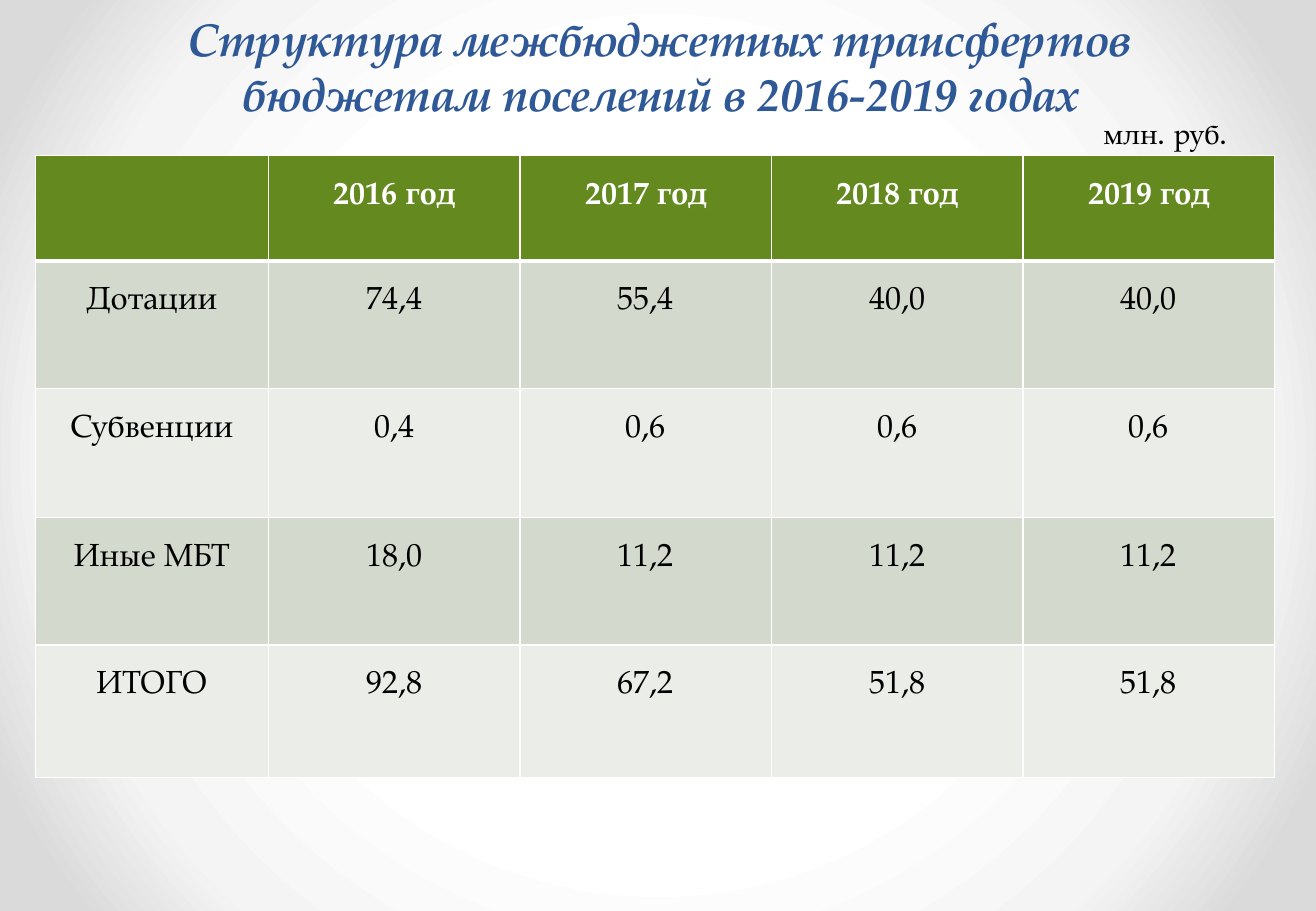
from lxml.etree import SubElement
from pptx import Presentation
from pptx.dml.color import RGBColor
from pptx.enum.text import MSO_ANCHOR, PP_ALIGN
from pptx.oxml import parse_xml
from pptx.oxml.ns import nsdecls, qn
from pptx.util import Inches, Pt

YEARS = ["", "2016 год", "2017 год", "2018 год", "2019 год"]
TRANSFERS = [
    ["Дотации", "74,4", "55,4", "40,0", "40,0"],
    ["Субвенции", "0,4", "0,6", "0,6", "0,6"],
    ["Иные МБТ", "18,0", "11,2", "11,2", "11,2"],
    ["ИТОГО", "92,8", "67,2", "51,8", "51,8"],
]
COLUMN_WIDTHS = [1.92] + [2.07] * 4
ROW_HEIGHTS = [0.87, 1.05, 1.06, 1.05, 1.09]


def rgb(value):
    return RGBColor.from_string(value)


class TransferSlide:
    font = "TeX Gyre Pagella"
    title_color, text_color, line_color = "2F5897", "000000", "FFFFFF"
    header_fill = "63891F"
    band_fills = ["D3DACD", "EAEDE8"]

    def __init__(self, presentation):
        self.slide = presentation.slides.add_slide(presentation.slide_layouts[6])

    def style(self, run, size, color, bold=False, italic=False):
        run.font.name = self.font
        run.font.size = Pt(size)
        run.font.color.rgb = rgb(color)
        run.font.bold, run.font.italic = bold, italic

    def background(self, stops):
        """Fill the slide with a gradient that spreads from its centre."""
        stop_list = "".join(
            f'<a:gs pos="{percent * 1000}"><a:srgbClr val="{color}"/></a:gs>'
            for percent, color in stops
        )
        gradient = parse_xml(
            f'<a:gradFill {nsdecls("a")} rotWithShape="1"><a:gsLst>{stop_list}</a:gsLst>'
            '<a:path path="circle"><a:fillToRect l="50000" t="50000" r="50000" b="50000"/>'
            "</a:path></a:gradFill>"
        )
        self.slide.background.fill.solid()
        properties = self.slide.element.cSld.find(f'{qn("p:bg")}/{qn("p:bgPr")}')
        properties.replace(properties[0], gradient)

    def text_box(self, left, top, width, height, wrap=True):
        box = self.slide.shapes.add_textbox(
            Inches(left), Inches(top), Inches(width), Inches(height)
        )
        frame = box.text_frame
        frame.word_wrap = wrap
        frame.margin_left = frame.margin_right = Inches(0.11)
        return frame

    def title(self, text):
        frame = self.text_box(0.56, 0.68, 9.75, 0.79)
        frame.vertical_anchor = MSO_ANCHOR.BOTTOM
        frame.margin_bottom = Inches(0.48)
        frame.text = text
        paragraph = frame.paragraphs[0]
        paragraph.alignment = PP_ALIGN.CENTER
        for run in paragraph.runs:
            self.style(run, 27, self.title_color, bold=True, italic=True)

    def unit(self, parts):
        paragraph = self.text_box(8.97, 0.88, 1.27, 0.43, wrap=False).paragraphs[0]
        for text, size in parts:
            run = paragraph.add_run()
            run.text = text
            self.style(run, size, self.text_color)

    def cell_borders(self, cell, bottom):
        properties = cell._tc.get_or_add_tcPr()
        widths = {"a:lnL": 1, "a:lnR": 1, "a:lnT": 1, "a:lnB": bottom}
        for position, (side, width) in enumerate(widths.items()):
            line = SubElement(properties, qn(side), w=str(Pt(width)))
            fill = SubElement(line, qn("a:solidFill"))
            SubElement(fill, qn("a:srgbClr"), val=self.line_color)
            properties.insert(position, line)

    def cell(self, cell, text, is_header, fill):
        cell.fill.solid()
        cell.fill.fore_color.rgb = rgb(fill)
        self.cell_borders(cell, 3 if is_header else 1)
        cell.margin_left = cell.margin_right = Inches(0.11)
        cell.margin_top = Inches(0.21)
        cell.text = text
        paragraph = cell.text_frame.paragraphs[0]
        paragraph.alignment = PP_ALIGN.CENTER
        color = self.line_color if is_header else self.text_color
        for run in paragraph.runs:
            self.style(run, 19, color, bold=is_header)

    def table(self, left, top, rows):
        table = self.slide.shapes.add_table(
            len(rows), len(rows[0]), Inches(left), Inches(top),
            Inches(sum(COLUMN_WIDTHS)), Inches(sum(ROW_HEIGHTS)),
        ).table
        for column, width in zip(table.columns, COLUMN_WIDTHS):
            column.width = Inches(width)
        for index, (row, height) in enumerate(zip(table.rows, ROW_HEIGHTS)):
            row.height = Inches(height)
            is_header = index == 0
            fill = self.header_fill if is_header else self.band_fills[(index - 1) % 2]
            for cell, text in zip(row.cells, rows[index]):
                self.cell(cell, text, is_header, fill)


def main():
    presentation = Presentation()
    presentation.slide_width = Inches(10.83)
    presentation.slide_height = Inches(7.5)
    page = TransferSlide(presentation)
    page.background([(50, "FFFFFF"), (76, "F4F4F4"), (92, "DADADA")])
    page.title("Структура межбюджетных трансфертов\vбюджетам поселений в 2016-2019 годах")
    page.table(0.29, 1.28, [YEARS] + TRANSFERS)
    page.unit([("млн", 17), (". ", 19), ("руб", 17), (".", 19)])
    presentation.save("out.pptx")


if __name__ == "__main__":
    main()
